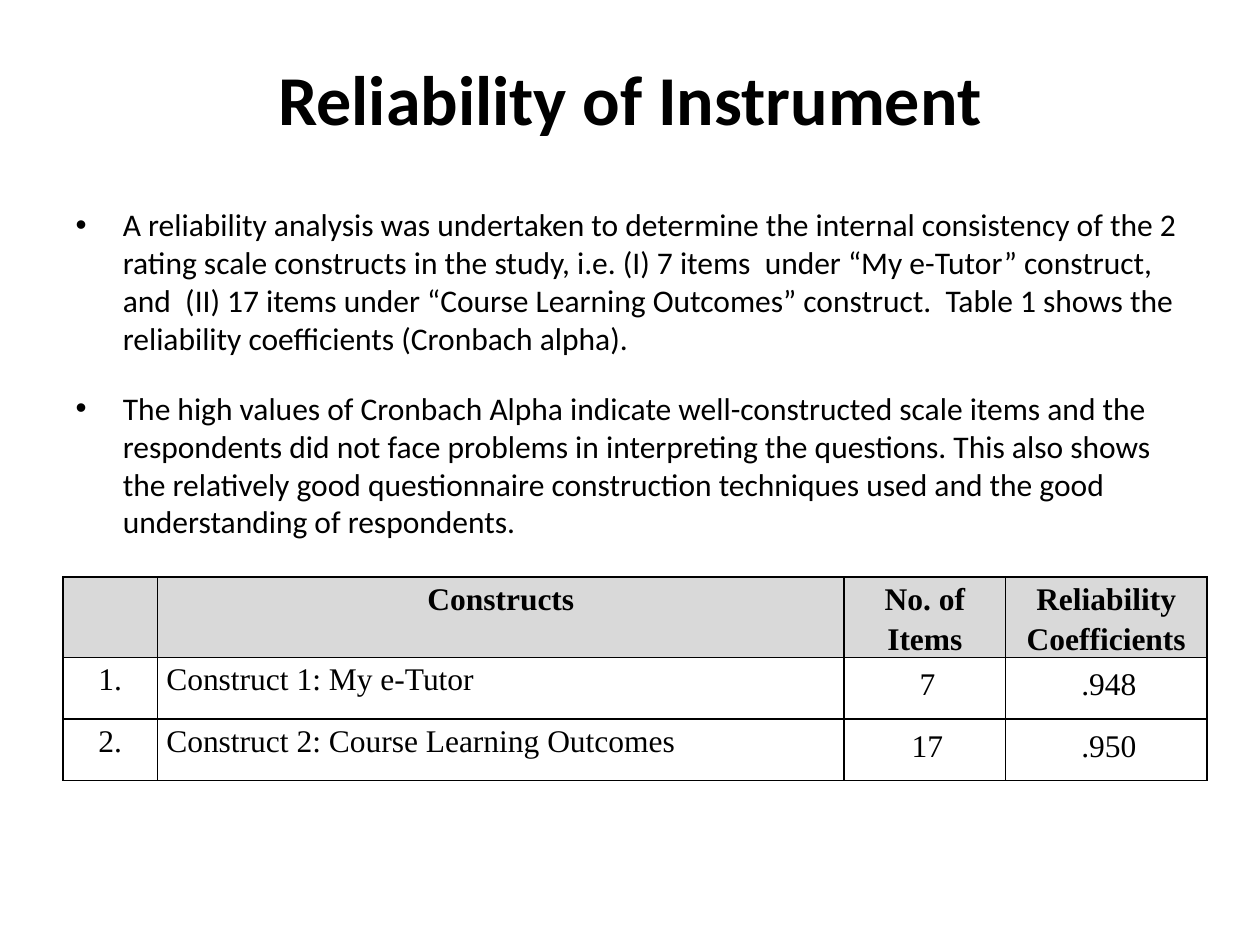
from dataclasses import dataclass

from lxml.etree import SubElement
from pptx import Presentation
from pptx.dml.color import RGBColor
from pptx.enum.text import MSO_ANCHOR, MSO_AUTO_SIZE, PP_ALIGN
from pptx.oxml.ns import qn
from pptx.util import Inches, Pt

COLORS = {"ink": "000000", "head": "D9D9D9"}
POINTS = [
    "A reliability analysis was undertaken to determine the internal consistency "
    "of the 2 rating scale constructs in the study, i.e. (I) 7 items  under "
    "“My e-Tutor” construct,  and  (II) 17 items under “Course Learning Outcomes” "
    "construct.  Table 1 shows the reliability coefficients (Cronbach alpha).",
    "The high values of Cronbach Alpha indicate well-constructed scale items and "
    "the respondents did not face problems in interpreting the questions. This "
    "also shows the relatively good questionnaire construction techniques used "
    "and the good understanding of respondents.",
]
GAPS = [3.6, 18.5]
ROWS = [
    ["", "Constructs", "No. of Items", "Reliability Coefficients"],
    ["1.", "Construct 1: My e-Tutor", "7", ".948"],
    ["2.", "Construct 2: Course Learning Outcomes", "17", ".950"],
]
HEIGHTS = [0.6, 0.49, 0.49]


@dataclass
class Column:
    width: float
    align: PP_ALIGN = PP_ALIGN.CENTER
    number: bool = False


COLUMNS = [
    Column(0.75),
    Column(5.45, PP_ALIGN.LEFT),
    Column(1.28, number=True),
    Column(1.6, number=True),
]


def apply(target, values: dict) -> None:
    for name, value in values.items():
        setattr(target, name, value)


def style(font, size: float, face: str, bold: bool = False) -> None:
    apply(font, {"size": Pt(size), "name": face, "bold": bold})
    font.color.rgb = RGBColor.from_string(COLORS["ink"])


def place(shape, left: float, top: float, width: float, height: float) -> None:
    apply(shape, {"left": Inches(left), "top": Inches(top),
                  "width": Inches(width), "height": Inches(height)})
    shape.text_frame.auto_size = MSO_AUTO_SIZE.NONE


def border(cell) -> None:
    props = cell._tc.get_or_add_tcPr()
    for side in ("lnL", "lnR", "lnT", "lnB"):
        line = SubElement(props, qn(f"a:{side}"), w=str(Pt(1)))
        fill = SubElement(line, qn("a:solidFill"))
        SubElement(fill, qn("a:srgbClr"), val=COLORS["ink"])


def fill_cell(cell, text: str, col: Column, head: bool) -> None:
    number = col.number and not head
    border(cell)
    if head:
        cell.fill.solid()
        cell.fill.fore_color.rgb = RGBColor.from_string(COLORS["head"])
    else:
        cell.fill.background()
    apply(cell, {
        "text": text,
        "margin_left": Inches(0.07), "margin_right": Inches(0.07),
        "margin_top": 0, "margin_bottom": 0,
        "vertical_anchor": MSO_ANCHOR.MIDDLE if number else MSO_ANCHOR.TOP,
    })
    para = cell.text_frame.paragraphs[0]
    apply(para, {"alignment": PP_ALIGN.CENTER if head else col.align,
                 "line_spacing": Pt(16) if number else 1.15})
    if number:
        para._p.get_or_add_pPr().set("marL", str(Inches(0.04)))
    style(para.font, 18, "Times New Roman", head)
    for run in para.runs:
        style(run.font, 18, "Times New Roman", head)


def add_grid(slide) -> None:
    frame = slide.shapes.add_table(
        len(ROWS), len(COLUMNS), Inches(0.5), Inches(4.58),
        Inches(sum(col.width for col in COLUMNS)), Inches(sum(HEIGHTS)))
    table = frame.table
    apply(table, {"first_row": False, "horz_banding": False})
    for i, col in enumerate(COLUMNS):
        table.columns[i].width = Inches(col.width)
    for r, texts in enumerate(ROWS):
        table.rows[r].height = Inches(HEIGHTS[r])
        for c, text in enumerate(texts):
            fill_cell(table.cell(r, c), text, COLUMNS[c], r == 0)


def main() -> None:
    deck = Presentation()
    apply(deck, {"slide_width": Inches(10), "slide_height": Inches(7.5)})
    slide = deck.slides.add_slide(deck.slide_layouts[1])
    title, body = slide.placeholders

    place(title, 0.5, 0.3, 9, 0.95)
    title.text_frame.text = "Reliability of Instrument"
    style(title.text_frame.paragraphs[0].runs[0].font, 40, "Calibri", True)

    place(body, 0.5, 1.58, 9, 5.12)
    body.text_frame.text = "\n".join(POINTS)
    for para, gap in zip(body.text_frame.paragraphs, GAPS):
        para.space_before = Pt(gap)
        style(para.runs[0].font, 18, "Calibri")

    add_grid(slide)
    deck.save("out.pptx")


if __name__ == "__main__":
    main()
